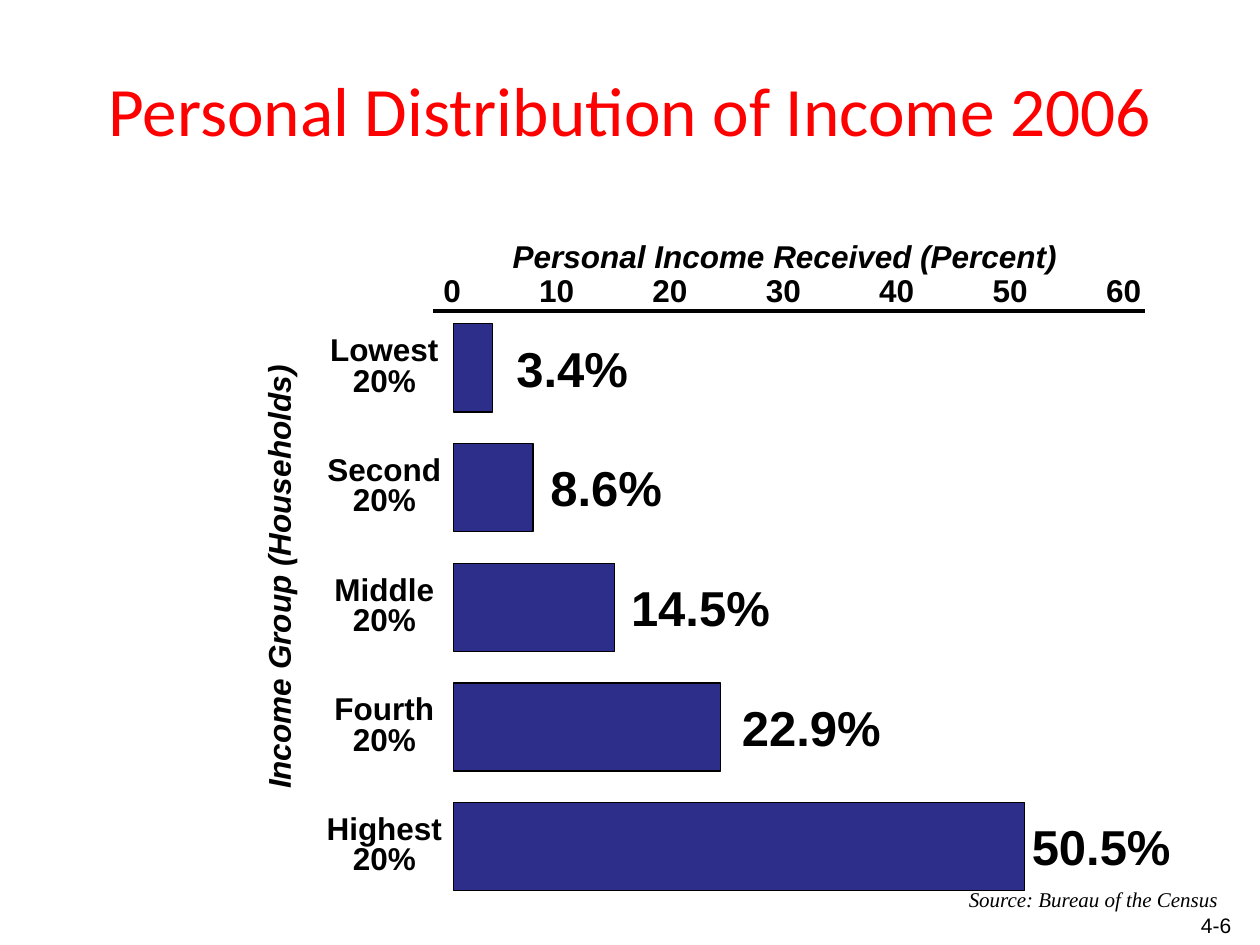
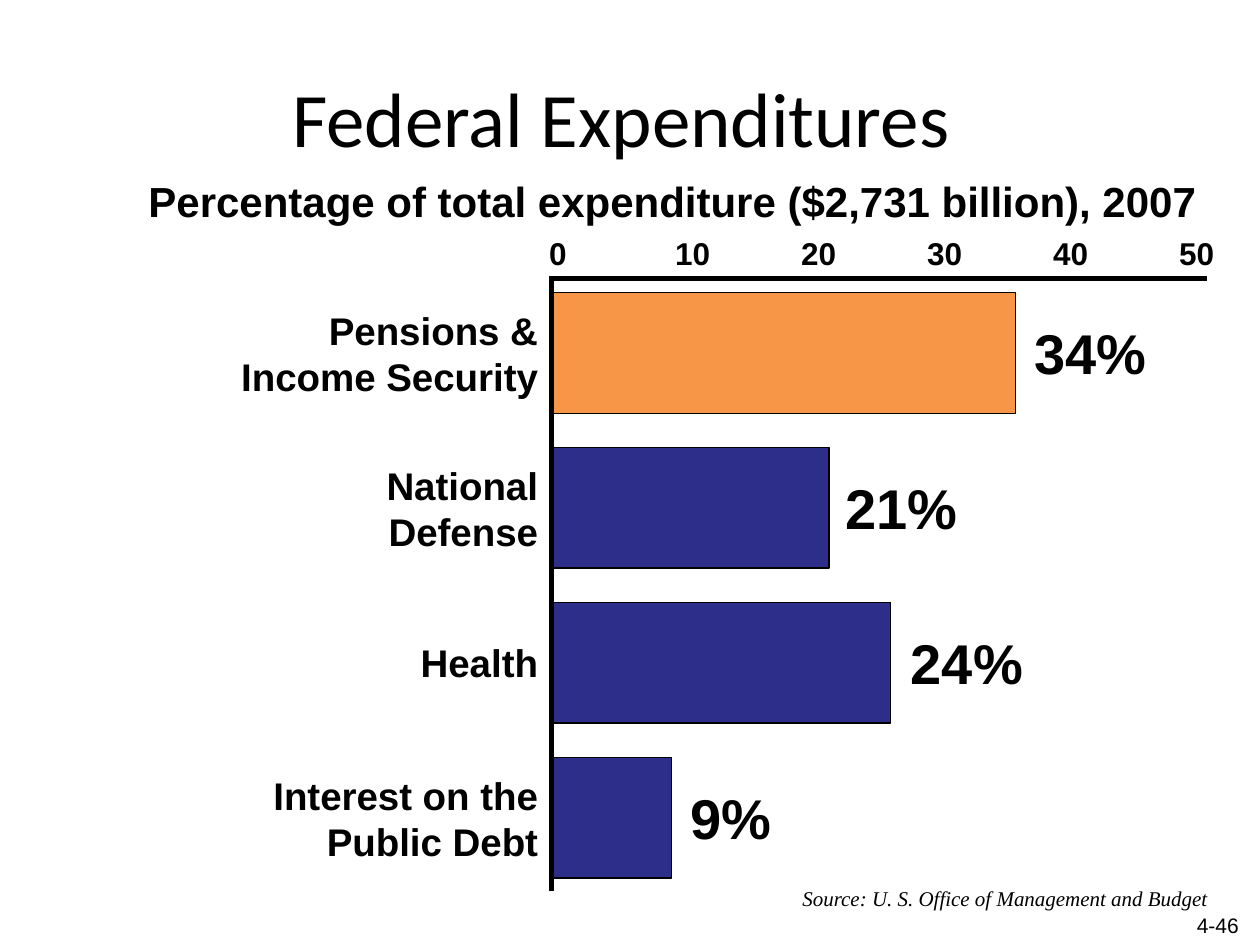
from dataclasses import dataclass

from lxml.etree import SubElement
from pptx import Presentation
from pptx.dml.color import RGBColor
from pptx.enum.shapes import MSO_CONNECTOR as Connector, MSO_SHAPE as Shape
from pptx.enum.text import MSO_ANCHOR as Anchor, PP_ALIGN as Align
from pptx.oxml.ns import qn
from pptx.util import Inches, Pt

BLACK, RED, NAVY, ORANGE = "000000", "FF0000", "2D2D8A", "F79646"
HEADING_FONT, BODY_FONT, SOURCE_FONT = "Calibri", "Arial", "Times New Roman"
TEXT_INSET = 0.11


@dataclass
class Bar:
    label: str
    length: float
    value: str
    value_left: float
    value_width: float
    color: str = NAVY


@dataclass
class BarStyle:
    left: float
    top: float
    pitch: float
    height: float
    label_left: float
    label_width: float
    label_size: float
    label_align: Align
    line_height: float
    line_spacing: float
    value_size: float
    value_height: float


INCOME_BARS = [
    Bar("Lowest\n20%", 0.31, "3.4%", 4, 1.09),
    Bar("Second\n20%", 0.63, "8.6%", 4.27, 1.1),
    Bar("Middle\n20%", 1.28, "14.5%", 4.91, 1.32),
    Bar("Fourth\n20%", 2.12, "22.9%", 5.79, 1.32),
    Bar("Highest\n20%", 4.53, "50.5%", 8.09, 1.32),
]
INCOME_STYLE = BarStyle(
    left=3.6, top=2.57, pitch=0.95, height=0.7,
    label_left=2.49, label_width=1.12, label_size=18, label_align=Align.CENTER,
    line_height=0.235, line_spacing=0.8, value_size=28, value_height=0.57)

EXPENDITURE_BARS = [
    Bar("Pensions &\nIncome Security", 3.67, "34%", 8.11, 1.1, ORANGE),
    Bar("National\nDefense", 2.19, "21%", 6.61, 1.1),
    Bar("Health", 2.68, "24%", 7.13, 1.09),
    Bar("Interest on the\nPublic Debt", 0.94, "9%", 5.38, 0.85),
]
EXPENDITURE_STYLE = BarStyle(
    left=4.39, top=2.32, pitch=1.23, height=0.96,
    label_left=1.81, label_width=2.56, label_size=22, label_align=Align.RIGHT,
    line_height=0.36, line_spacing=1, value_size=32, value_height=0.64)


def rgb(color):
    return RGBColor.from_string(color)


def add_text(slide, text, left, top, width, height, size, font=BODY_FONT, color=BLACK,
             bold=False, italic=False, align=Align.LEFT, anchor=Anchor.TOP,
             spacing=1, wrap=False):
    box = slide.shapes.add_textbox(Inches(left), Inches(top), Inches(width), Inches(height))
    frame = box.text_frame
    frame.word_wrap = wrap
    frame.vertical_anchor = anchor
    frame.text = text
    for paragraph in frame.paragraphs:
        paragraph.alignment = align
        paragraph.line_spacing = spacing
        paragraph.font.name = font
        paragraph.font.size = Pt(size)
        paragraph.font.bold = bold
        paragraph.font.italic = italic
        paragraph.font.color.rgb = rgb(color)
    return box


def add_title(slide, text, size, color=BLACK, spacing=1):
    add_text(slide, text, 0.5, 0.3, 9, 1.25, size, HEADING_FONT, color,
             align=Align.CENTER, anchor=Anchor.MIDDLE, spacing=spacing, wrap=True)


def add_footer(slide, source, source_left, source_width, source_top, number, number_left):
    add_text(slide, source, source_left, source_top, source_width, 0.3, 12,
             SOURCE_FONT, italic=True)
    add_text(slide, number, number_left, 7.19, 2.33, 0.27, 12, align=Align.RIGHT, wrap=True)


def add_scale(slide, maximum, left, top, width, first_stop, step):
    ticks = range(0, maximum + 1, 10)
    box = add_text(slide, "\t".join(map(str, ticks)), left, top, width, 0.4, 18, bold=True)
    properties = box.text_frame.paragraphs[0]._p.get_or_add_pPr()
    tab_list = properties.makeelement(qn("a:tabLst"))
    for index in range(len(ticks) - 1):
        SubElement(tab_list, qn("a:tab"), pos=str(Inches(first_stop + index * step)), algn="l")
    properties.find(qn("a:defRPr")).addprevious(tab_list)


def add_line(slide, start, end, width):
    points = [Inches(value) for value in (*start, *end)]
    line = slide.shapes.add_connector(Connector.STRAIGHT, *points)
    line.line.color.rgb = rgb(BLACK)
    line.line.width = Pt(width)
    SubElement(line._element.spPr, qn("a:effectLst"))


def add_bar(slide, bar, top, style):
    shape = slide.shapes.add_shape(Shape.RECTANGLE, Inches(style.left), Inches(top),
                                   Inches(bar.length), Inches(style.height))
    shape.shadow.inherit = False
    shape.fill.solid()
    shape.fill.fore_color.rgb = rgb(bar.color)
    shape.line.color.rgb = rgb(BLACK)
    shape.line.width = Pt(0.75)


def add_bars(slide, bars, style):
    for index, bar in enumerate(bars):
        top = style.top + index * style.pitch
        middle = top + style.height / 2
        label_height = TEXT_INSET + style.line_height * len(bar.label.split("\n"))
        add_bar(slide, bar, top, style)
        add_text(slide, bar.label, style.label_left, middle - label_height / 2,
                 style.label_width, label_height, style.label_size, bold=True,
                 align=style.label_align, spacing=style.line_spacing)
        add_text(slide, bar.value, bar.value_left, middle - style.value_height / 2,
                 bar.value_width, style.value_height, style.value_size, bold=True)


def build_income_slide(slide):
    add_title(slide, "Personal Distribution of Income 2006", 39.6, RED, 0.8)
    add_bars(slide, INCOME_BARS, INCOME_STYLE)
    axis_title = add_text(slide, "Income Group (Households)", 0.43, 4.38, 3.56, 0.4, 18,
                          bold=True, italic=True)
    axis_title.rotation = 270
    add_text(slide, "Personal Income Received (Percent)", 3.97, 1.83, 4.52, 0.4, 18,
             bold=True, italic=True)
    add_scale(slide, 60, 3.42, 2.1, 5.76, first_stop=0.76, step=0.9)
    add_line(slide, (3.44, 2.47), (9.09, 2.47), 2.25)
    add_footer(slide, "Source: Bureau of the Census", 7.59, 2.19, 6.99, "4-6", 7.54)


def build_expenditure_slide(slide):
    add_title(slide, "Federal Expenditures ", 44)
    add_text(slide, "Percentage of total expenditure ($2,731 billion), 2007",
             1.08, 1.34, 8.6, 0.51, 24, bold=True)
    add_scale(slide, 50, 4.26, 1.81, 5.48, first_stop=1, step=1)
    add_bars(slide, EXPENDITURE_BARS, EXPENDITURE_STYLE)
    add_line(slide, (4.37, 2.21), (9.58, 2.21), 3)
    add_line(slide, (4.38, 2.19), (4.38, 7.07), 3)
    add_footer(slide, "Source: U. S. Office of Management and Budget", 6.27, 3.43, 6.98,
               "4-46", 7.6)


def main():
    presentation = Presentation()
    presentation.slide_width = Inches(10)
    presentation.slide_height = Inches(7.5)
    blank_layout = presentation.slide_layouts[6]
    for build in (build_income_slide, build_expenditure_slide):
        build(presentation.slides.add_slide(blank_layout))
    presentation.save("out.pptx")


if __name__ == "__main__":
    main()
